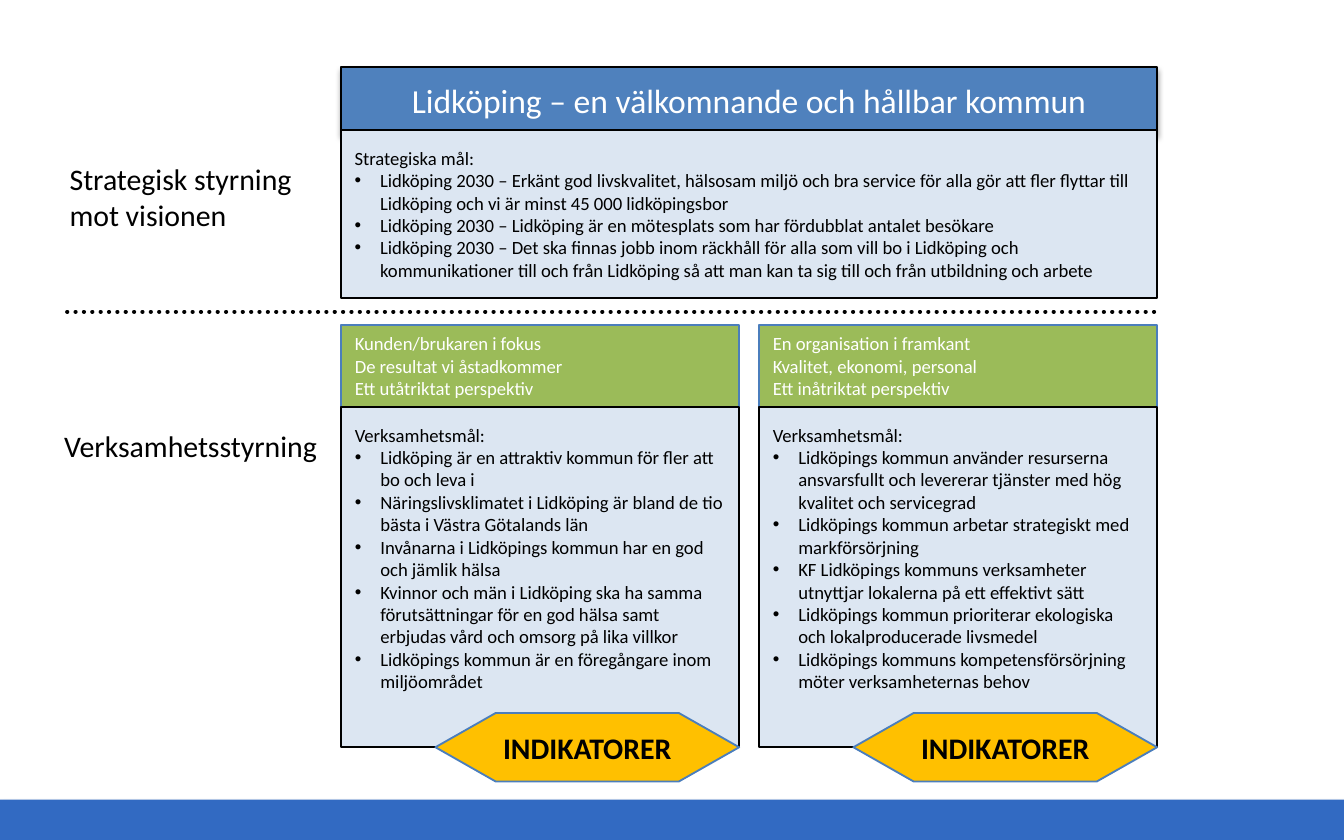
from lxml.etree import SubElement
from pptx import Presentation
from pptx.dml.color import RGBColor
from pptx.enum.dml import MSO_LINE
from pptx.enum.shapes import MSO_CONNECTOR, MSO_SHAPE
from pptx.enum.text import MSO_ANCHOR, MSO_AUTO_SIZE, PP_ALIGN
from pptx.oxml.ns import qn
from pptx.util import Inches, Pt

BLACK, WHITE = "000000", "FFFFFF"
PALE, GREEN, EDGE = "DCE6F2", "9BBB59", "4B7EBC"
BODY = {"size": Pt(10)}
LABEL = {"size": Pt(16)}
HEADER_H, GREEN_H = 0.47, 0.61
HEXAGON_W, HEXAGON_H = 2.26, 0.51


def rgb(value):
    return RGBColor.from_string(value)


def place(s, box):
    for name, value in zip(("left", "top", "width", "height"), box):
        setattr(s, name, Inches(value))


def style(s, fill, line=None):
    s.shadow.inherit = False
    s.fill.solid()
    s.fill.fore_color.rgb = rgb(fill)
    if line:
        s.line.color.rgb = rgb(line)
        s.line.width = Pt(1)
    else:
        s.line.fill.background()


def add_shadow(s):
    effects = s._element.spPr.find(qn("a:effectLst"))
    shadow = SubElement(effects, qn("a:outerShdw"), blurRad=str(Pt(3.1)),
                        dist=str(Pt(1.8)), dir="5400000", rotWithShape="0")
    color = SubElement(shadow, qn("a:srgbClr"), val=BLACK)
    SubElement(color, qn("a:alpha"), val="35000")


def set_bullet(p, bullet):
    pPr = p._p.get_or_add_pPr()
    indent = Inches(0.19) if bullet else 0
    pPr.set("marL", str(indent))
    pPr.set("indent", str(-indent))
    if bullet:
        SubElement(pPr, qn("a:buFont"), typeface="Arial")
        SubElement(pPr, qn("a:buChar"), char="•")
    else:
        SubElement(pPr, qn("a:buNone"))


def write(s, lines, font, color=BLACK, bullets=False, align=PP_ALIGN.LEFT,
          anchor=MSO_ANCHOR.TOP, top=0.05, bottom=0.05):
    tf = s.text_frame
    frame = {"word_wrap": True, "auto_size": MSO_AUTO_SIZE.NONE,
             "vertical_anchor": anchor, "margin_left": Inches(0.1),
             "margin_right": Inches(0.1), "margin_top": Inches(top),
             "margin_bottom": Inches(bottom)}
    for name, value in frame.items():
        setattr(tf, name, value)
    for i, line in enumerate(lines):
        p = tf.paragraphs[0] if i == 0 else tf.add_paragraph()
        set_bullet(p, bullets and i > 0)
        p.alignment = align
        p.space_before = p.space_after = Pt(0)
        r = p.add_run()
        r.text = line
        for name, value in {"name": "Calibri", "bold": False, **font}.items():
            setattr(r.font, name, value)
        r.font.color.rgb = rgb(color)


def add_band(slide, box):
    s = slide.shapes.add_shape(MSO_SHAPE.RECTANGLE, *map(Inches, box))
    style(s, "326AC2")
    add_shadow(s)


def add_label(slide, box, lines):
    s = slide.shapes.add_textbox(*map(Inches, box))
    write(s, lines, LABEL)


def add_vision(slide, box, title, goals):
    left, top, width, height = box
    header = slide.shapes.title
    place(header, (left, top, width, HEADER_H + 0.02))
    style(header, "4F81BD", BLACK)
    add_shadow(header)
    write(header, [title], {"size": Pt(18)}, WHITE, align=PP_ALIGN.CENTER,
          anchor=MSO_ANCHOR.MIDDLE)

    panel = slide.shapes.add_shape(
        MSO_SHAPE.RECTANGLE,
        *map(Inches, (left, top + HEADER_H, width, height - HEADER_H)))
    style(panel, PALE, BLACK)
    write(panel, goals, BODY, bullets=True, top=0.12, bottom=0.12)


def add_divider(slide, left, right, y):
    line = slide.shapes.add_connector(
        MSO_CONNECTOR.STRAIGHT, Inches(left), Inches(y), Inches(right), Inches(y))
    line.line.color.rgb = rgb(BLACK)
    line.line.width = Pt(2.25)
    line.line.dash_style = MSO_LINE.ROUND_DOT
    line.line._get_or_add_ln().set("cap", "rnd")
    SubElement(line._element.spPr, qn("a:effectLst"))


def add_perspective(slide, box, header, panel, perspective, goals):
    left, top, width, height = box
    place(header, (left, top, width, GREEN_H))
    style(header, GREEN, EDGE)
    write(header, perspective, BODY, WHITE)

    place(panel, (left, top + GREEN_H, width, height - GREEN_H))
    style(panel, PALE, BLACK)
    write(panel, goals, BODY, bullets=True, top=0.12)

    hexagon = slide.shapes.add_shape(
        MSO_SHAPE.HEXAGON,
        *map(Inches, (left + width - HEXAGON_W, top + height - HEXAGON_H / 2,
                      HEXAGON_W, HEXAGON_H)))
    hexagon.adjustments[0] = 0.879
    style(hexagon, "FFC000", EDGE)
    write(hexagon, ["INDIKATORER"], {**LABEL, "bold": True},
          align=PP_ALIGN.CENTER, anchor=MSO_ANCHOR.MIDDLE)


STRATEGIC_GOALS = [
    "Strategiska mål:",
    "Lidköping 2030 – Erkänt god livskvalitet, hälsosam miljö och bra service för alla gör att fler flyttar till Lidköping och vi är minst 45 000 lidköpingsbor",
    "Lidköping 2030 – Lidköping är en mötesplats som har fördubblat antalet besökare",
    "Lidköping 2030 – Det ska finnas jobb inom räckhåll för alla som vill bo i Lidköping och kommunikationer till och från Lidköping så att man kan ta sig till och från utbildning och arbete",
]
PERSPECTIVES = [
    (["Kunden/brukaren i fokus", "De resultat vi åstadkommer", "Ett utåtriktat perspektiv"],
     ["Verksamhetsmål:",
      "Lidköping är en attraktiv kommun för fler att bo och leva i",
      "Näringslivsklimatet i Lidköping är bland de tio bästa i Västra Götalands län",
      "Invånarna i Lidköpings kommun har en god och jämlik hälsa",
      "Kvinnor och män i Lidköping ska ha samma förutsättningar för en god hälsa samt erbjudas vård och omsorg på lika villkor",
      "Lidköpings kommun är en föregångare inom miljöområdet"]),
    (["En organisation i framkant", "Kvalitet, ekonomi, personal", "Ett inåtriktat perspektiv"],
     ["Verksamhetsmål:",
      "Lidköpings kommun använder resurserna ansvarsfullt och levererar tjänster med hög kvalitet och servicegrad",
      "Lidköpings kommun arbetar strategiskt med markförsörjning",
      "KF Lidköpings kommuns verksamheter utnyttjar lokalerna på ett effektivt sätt",
      "Lidköpings kommun prioriterar ekologiska och lokalproducerade livsmedel",
      "Lidköpings kommuns kompetensförsörjning möter verksamheternas behov"]),
]


def main():
    prs = Presentation()
    prs.slide_width, prs.slide_height = Inches(10), Inches(6.25)
    slide = prs.slides.add_slide(prs.slide_layouts.get_by_name("Comparison"))
    holders = list(slide.placeholders)[1:]

    add_band(slide, (0, 5.95, 10, 0.3))
    add_vision(slide, (2.54, 0.5, 6.07, 1.72),
               "Lidköping – en välkomnande och hållbar kommun", STRATEGIC_GOALS)
    add_divider(slide, 0.5, 8.63, 2.32)
    for i, (perspective, goals) in enumerate(PERSPECTIVES):
        header, panel = holders[2 * i:2 * i + 2]
        add_perspective(slide, (2.54 + i * 3.11, 2.42, 2.96, 3.14),
                        header, panel, perspective, goals)
    add_label(slide, (0.42, 1.15, 1.96, 0.64), ["Strategisk styrning", "mot visionen"])
    add_label(slide, (0.38, 3.13, 2.1, 0.37), ["Verksamhetsstyrning"])
    prs.save("out.pptx")


if __name__ == "__main__":
    main()
